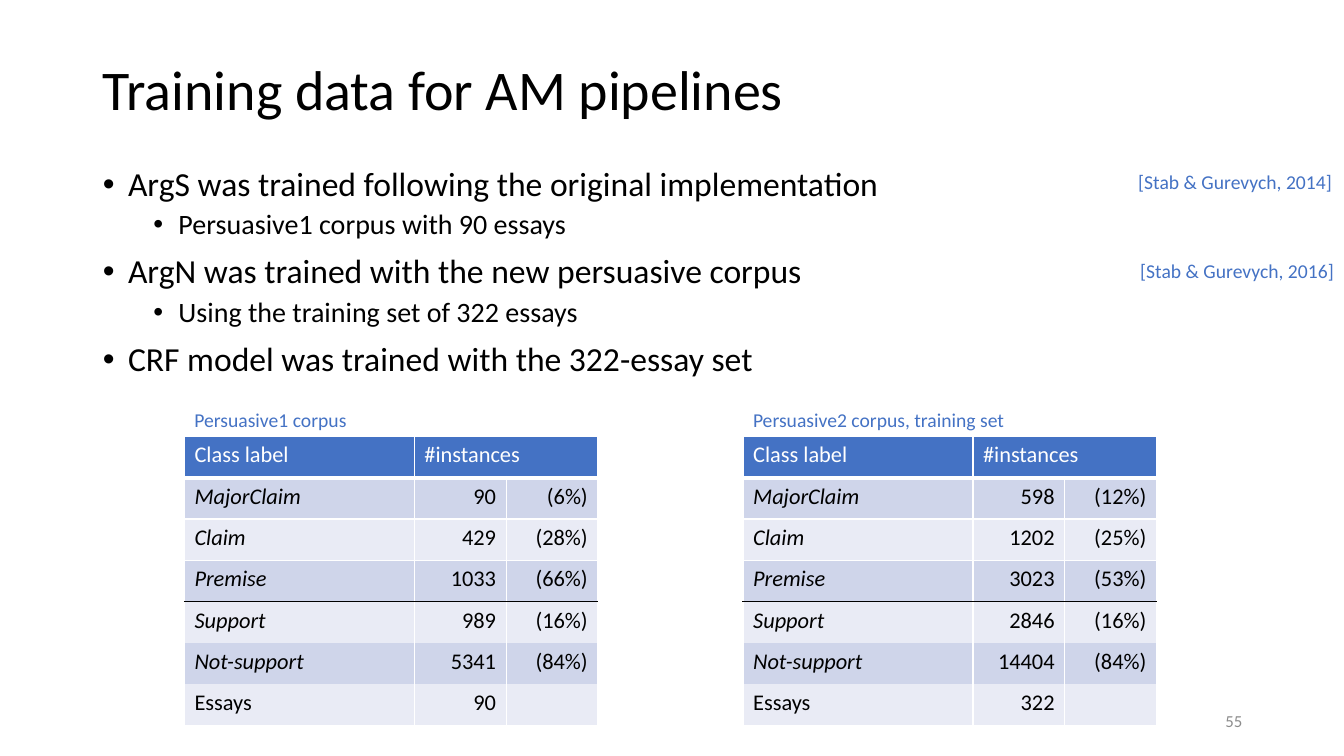
import pptx
import pptx.dml.color
import pptx.enum.text
import pptx.oxml
import pptx.oxml.ns
import pptx.util

Inches, Pt = pptx.util.Inches, pptx.util.Pt
RGB = pptx.dml.color.RGBColor
ALIGN = pptx.enum.text.PP_ALIGN
ANCHOR = pptx.enum.text.MSO_ANCHOR
AUTO = pptx.enum.text.MSO_AUTO_SIZE
NS = pptx.oxml.ns.nsdecls("a")

COLORS = {"text": "000000", "accent": "4472C4", "white": "FFFFFF",
          "band": "CFD5EA", "light": "E9EBF5", "number": "8C8C8C"}


class Deck:
    font = "Calibri"

    def __init__(self, prs):
        self.prs = prs
        self.slide = prs.slides.add_slide(prs.slide_layouts[1])

    def place(self, sp, left, top, width, height):
        box = {"left": left, "top": top, "width": width, "height": height}
        for name, value in box.items():
            setattr(sp, name, Inches(value))

    def add_text(self, p, text, size, color="text", align=ALIGN.LEFT, **fmt):
        r = p.add_run()
        r.text = text
        p.alignment = align
        for name, value in {"name": self.font, "size": Pt(size), **fmt}.items():
            setattr(r.font, name, value)
        r.font.color.rgb = RGB.from_string(COLORS[color])

    def title(self, text, *box):
        sp = self.slide.shapes.title
        self.place(sp, *box)
        tf = sp.text_frame
        tf.vertical_anchor, tf.auto_size = ANCHOR.MIDDLE, AUTO.NONE
        tf.paragraphs[0].line_spacing = 0.9
        self.add_text(tf.paragraphs[0], text, 40)

    def bullets(self, items, *box):
        sp = self.slide.placeholders[1]
        self.place(sp, *box)
        tf = sp.text_frame
        tf.auto_size = AUTO.NONE
        for i, (level, text) in enumerate(items):
            p = tf.add_paragraph() if i else tf.paragraphs[0]
            fmt = {"level": level, "line_spacing": 0.9, "space_after": Pt(0),
                   "space_before": Pt(5 if level else 10)}
            for name, value in fmt.items():
                setattr(p, name, value)
            self.add_text(p, text, 20 if level else 24)
            pPr = p._p.get_or_add_pPr()
            pPr.set("marL", str(Inches(0.25 + 0.5 * level)))
            pPr.set("indent", str(Inches(-0.25)))
            for tag in (f'<a:buFont {NS} typeface="Arial"/>', f'<a:buChar {NS} char="•"/>'):
                pPr.append(pptx.oxml.parse_xml(tag))

    def label(self, text, *box, size=14, color="accent", align=ALIGN.LEFT, wrap=False):
        sp = self.slide.shapes.add_textbox(*map(Inches, box))
        tf = sp.text_frame
        tf.word_wrap, tf.vertical_anchor = wrap, ANCHOR.MIDDLE
        tf.auto_size = AUTO.NONE if wrap else AUTO.SHAPE_TO_FIT_TEXT
        self.add_text(tf.paragraphs[0], text, size, color, align)

    def borders(self, cell, top, bottom):
        """Each side is a (colour, points) pair, or None for no line."""
        side = ("white", 1)
        tcPr = cell._tc.get_or_add_tcPr()
        for i, (tag, line) in enumerate(zip("LRTB", (side, side, top, bottom))):
            color, width = line or ("white", 0)
            fill = (f'<a:solidFill><a:srgbClr val="{COLORS[color]}"/></a:solidFill>'
                    if line else "<a:noFill/>")
            tcPr.insert(i, pptx.oxml.parse_xml(
                f'<a:ln{tag} {NS} w="{Pt(width)}">{fill}</a:ln{tag}>'))

    def table(self, rows, left, top, widths, row_height):
        box = (left, top, sum(widths), row_height * len(rows))
        tbl = self.slide.shapes.add_table(
            len(rows), len(widths), *map(Inches, box)).table
        for col, width in zip(tbl.columns, widths):
            col.width = Inches(width)
        white, rule = ("white", 1), ("text", 1)
        # Lines above each row, then the one below the last row
        lines = [white, ("white", 3), white, white, rule, None, None, white]
        for i, row in enumerate(rows):
            tbl.rows[i].height = Inches(row_height)
            fill = "accent" if i == 0 else "band" if i % 2 else "light"
            for j, text in enumerate(row):
                cell = tbl.cell(i, j)
                cell.fill.solid()
                cell.fill.fore_color.rgb = RGB.from_string(COLORS[fill])
                self.borders(cell, lines[i], lines[i + 1])
                if text:
                    self.add_text(cell.text_frame.paragraphs[0], text, 16,
                                  "text" if i else "white",
                                  ALIGN.RIGHT if i and j else ALIGN.LEFT,
                                  bold=False,
                                  italic=j == 0 and 0 < i < len(rows) - 1)
        tbl.cell(0, 1).merge(tbl.cell(0, 2))


def main():
    prs = pptx.Presentation()
    prs.slide_width, prs.slide_height = Inches(13.33), Inches(7.5)
    s = Deck(prs)

    # Title and list
    s.title("Training data for AM pipelines", 0.92, 0.4, 11.5, 1.04)
    s.bullets([
        (0, "ArgS was trained following the original implementation"),
        (1, "Persuasive1 corpus with 90 essays"),
        (0, "ArgN was trained with the new persuasive corpus"),
        (1, "Using the training set of 322 essays"),
        (0, "CRF model was trained with the 322-essay set"),
    ], 0.92, 1.61, 11.5, 5.14)

    # Slide number and citations
    s.label("55", 9.42, 6.95, 3, 0.4, size=12, color="number",
            align=ALIGN.RIGHT, wrap=True)
    s.label("[Stab & Gurevych, 2014]", 11.19, 1.63, 2.14, 0.34)
    s.label("[Stab & Gurevych, 2016]", 11.21, 2.52, 2.14, 0.34)

    # Corpus tables with captions
    classes = ["MajorClaim", "Claim", "Premise", "Support", "Not-support", "Essays"]
    corpora = [
        ("Persuasive1 corpus", 1.83, 1.73,
         ["90", "429", "1033", "989", "5341", "90"],
         ["(6%)", "(28%)", "(66%)", "(16%)", "(84%)", ""]),
        ("Persuasive2 corpus, training set", 7.37, 2.72,
         ["598", "1202", "3023", "2846", "14404", "322"],
         ["(12%)", "(25%)", "(53%)", "(16%)", "(84%)", ""]),
    ]
    for caption, left, width, counts, shares in corpora:
        rows = [("Class label", "#instances", ""), *zip(classes, counts, shares)]
        s.table(rows, left, 4.33, [2.28, 0.91, 0.91], 0.41)
        s.label(caption, left, 3.99, width, 0.34)

    prs.save("out.pptx")


if __name__ == "__main__":
    main()
